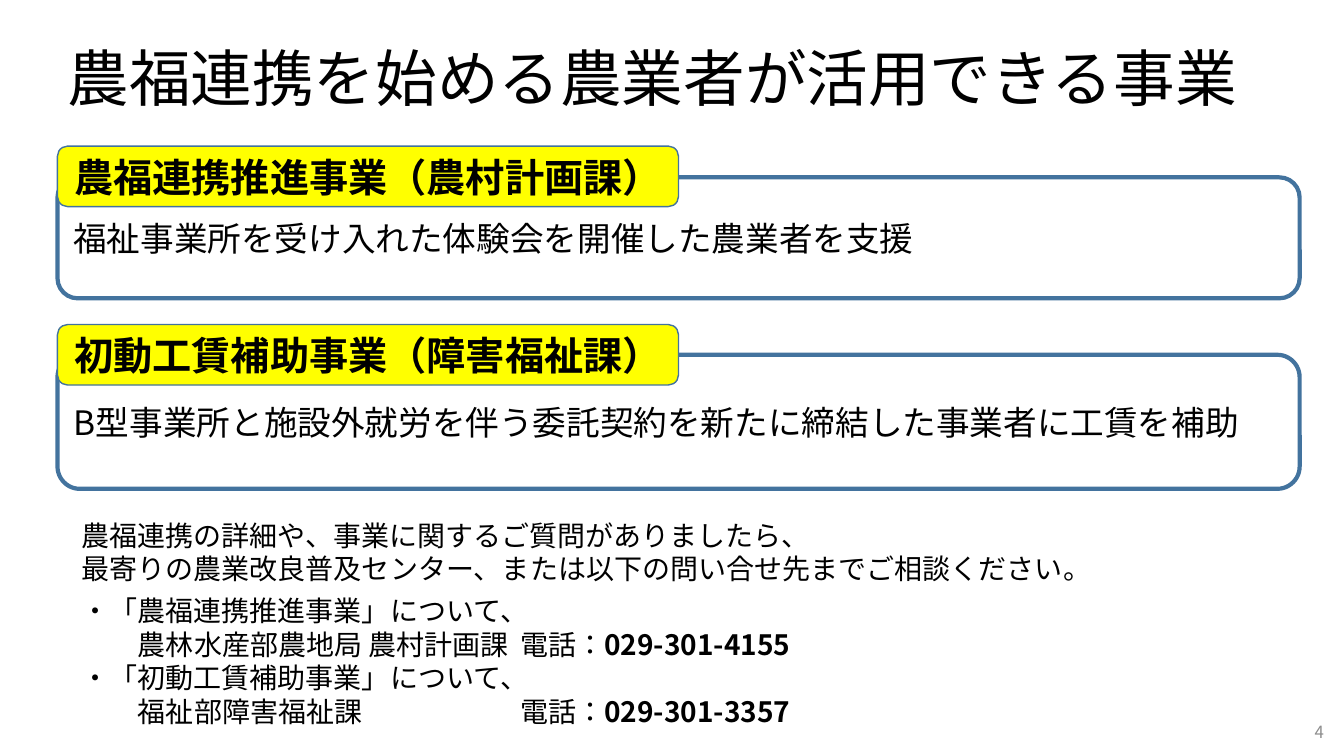
from dataclasses import dataclass

from lxml.etree import SubElement
from pptx import Presentation
from pptx.dml.color import RGBColor
from pptx.enum.lang import MSO_LANGUAGE_ID
from pptx.enum.shapes import MSO_SHAPE
from pptx.enum.text import MSO_ANCHOR, PP_ALIGN
from pptx.oxml.ns import qn
from pptx.shapes.autoshape import Shape
from pptx.slide import Slide
from pptx.text.text import _Paragraph as Paragraph
from pptx.util import Inches, Pt


@dataclass(frozen=True)
class Theme:
    font: str = "Noto Sans CJK JP"
    text: RGBColor = RGBColor(0x00, 0x00, 0x00)
    muted: RGBColor = RGBColor(0x8C, 0x8C, 0x8C)
    panel: RGBColor = RGBColor(0xFF, 0xFF, 0xFF)
    label: RGBColor = RGBColor(0xFF, 0xFF, 0x00)
    outline: RGBColor = RGBColor(0x43, 0x73, 0x9E)
    title_size: int = 44
    label_size: int = 28
    body_size: int = 24
    contact_size: int = 20
    number_size: int = 12


@dataclass(frozen=True)
class Box:
    left: float
    top: float
    width: float
    height: float

    def inches(self) -> tuple[Inches, Inches, Inches, Inches]:
        return Inches(self.left), Inches(self.top), Inches(self.width), Inches(self.height)


@dataclass(frozen=True)
class Program:
    label: str
    description: str
    label_top: float
    panel_top: float
    panel_height: float


@dataclass(frozen=True)
class Contact:
    topic: str
    office: str
    phone: str


THEME = Theme()
MARGIN = 0.57
CONTACT_LEFT = 0.71
CONTACT_TABS = (0.56, 4.35)

PROGRAMS = (
    Program("農福連携推進事業（農村計画課）",
            "福祉事業所を受け入れた体験会を開催した農業者を支援", 1.45, 1.76, 1.2),
    Program("初動工賃補助事業（障害福祉課）",
            "B型事業所と施設外就労を伴う委託契約を新たに締結した事業者に工賃を補助",
            3.22, 3.52, 1.33),
)
CONTACTS = (
    Contact("農福連携推進事業", "農林水産部農地局 農村計画課", "029-301-4155"),
    Contact("初動工賃補助事業", "福祉部障害福祉課", "029-301-3357"),
)


def format_runs(paragraph: Paragraph, size: int, color: RGBColor = THEME.text,
                bold: bool = False) -> None:
    for run in paragraph.runs:
        font = run.font
        font.size, font.bold, font.name = Pt(size), bold, THEME.font
        font.color.rgb = color
        font.language_id = MSO_LANGUAGE_ID.JAPANESE
        # East Asian typeface follows the Latin one
        latin = font._element.find(qn("a:latin"))
        east_asian = SubElement(font._element, qn("a:ea"), typeface=THEME.font)
        latin.addnext(east_asian)


def add_text(slide: Slide, box: Box, text: str, size: int,
             color: RGBColor = THEME.text, anchor: MSO_ANCHOR = MSO_ANCHOR.TOP,
             alignment: PP_ALIGN = PP_ALIGN.LEFT, wrap: bool = True) -> Shape:
    shape = slide.shapes.add_textbox(*box.inches())
    text_frame = shape.text_frame
    text_frame.word_wrap = wrap
    text_frame.vertical_anchor = anchor
    paragraph = text_frame.paragraphs[0]
    paragraph.text = text
    paragraph.alignment = alignment
    format_runs(paragraph, size, color)
    return shape


def add_rounded_box(slide: Slide, box: Box, text: str, size: int, fill: RGBColor,
                    line_width: float, alignment: PP_ALIGN, bold: bool = False) -> None:
    shape = slide.shapes.add_shape(MSO_SHAPE.ROUNDED_RECTANGLE, *box.inches())
    shape.shadow.inherit = False
    shape.fill.solid()
    shape.fill.fore_color.rgb = fill
    shape.line.color.rgb = THEME.outline
    shape.line.width = Pt(line_width)
    text_frame = shape.text_frame
    text_frame.word_wrap = True
    text_frame.vertical_anchor = MSO_ANCHOR.MIDDLE
    paragraph = text_frame.paragraphs[0]
    paragraph.text = text
    paragraph.alignment = alignment
    format_runs(paragraph, size, bold=bold)


def add_program(slide: Slide, program: Program) -> None:
    add_rounded_box(slide, Box(MARGIN, program.panel_top, 12.32, program.panel_height),
                    program.description, THEME.body_size, THEME.panel, 3, PP_ALIGN.LEFT)
    add_rounded_box(slide, Box(MARGIN, program.label_top, 6.16, 0.6), program.label,
                    THEME.label_size, THEME.label, 1, PP_ALIGN.CENTER, bold=True)


def add_contacts(slide: Slide, box: Box, contacts: tuple[Contact, ...]) -> None:
    text_frame = slide.shapes.add_textbox(*box.inches()).text_frame
    text_frame.word_wrap = True
    for index, contact in enumerate(contacts):
        paragraph = text_frame.add_paragraph() if index else text_frame.paragraphs[0]
        paragraph.text = f"・「{contact.topic}」について、\v\t{contact.office}\t電話："
        format_runs(paragraph, THEME.contact_size)
        phone = paragraph.add_run()
        phone.text = contact.phone
        phone.font.size, phone.font.bold, phone.font.name = Pt(THEME.contact_size), True, THEME.font
        phone.font.color.rgb = THEME.text
        # Tab stops align the offices and the phone numbers
        tab_list = SubElement(paragraph._p.get_or_add_pPr(), qn("a:tabLst"))
        for position in CONTACT_TABS:
            SubElement(tab_list, qn("a:tab"), pos=str(Inches(position)), algn="l")


def main() -> None:
    presentation = Presentation()
    presentation.slide_width, presentation.slide_height = Inches(13.33), Inches(7.5)
    slide = presentation.slides.add_slide(presentation.slide_layouts[6])

    # Title
    title = add_text(slide, Box(MARGIN, 0.08, 11.85, 1.45),
                     "農福連携を始める農業者が活用できる事業", THEME.title_size,
                     anchor=MSO_ANCHOR.MIDDLE)
    title.text_frame.paragraphs[0].line_spacing = 0.9

    # Support programs
    for program in PROGRAMS:
        add_program(slide, program)

    # Enquiries
    add_text(slide, Box(CONTACT_LEFT, 5.09, 10.3, 0.77),
             "農福連携の詳細や、事業に関するご質問がありましたら、\v"
             "最寄りの農業改良普及センター、または以下の問い合せ先までご相談ください。",
             THEME.contact_size, wrap=False)
    add_contacts(slide, Box(CONTACT_LEFT, 5.84, 9.05, 1.45), CONTACTS)

    # Slide number
    add_text(slide, Box(10.23, 7.06, 3, 0.4), "4", THEME.number_size, THEME.muted,
             MSO_ANCHOR.MIDDLE, PP_ALIGN.RIGHT)

    presentation.save("out.pptx")


if __name__ == "__main__":
    main()
